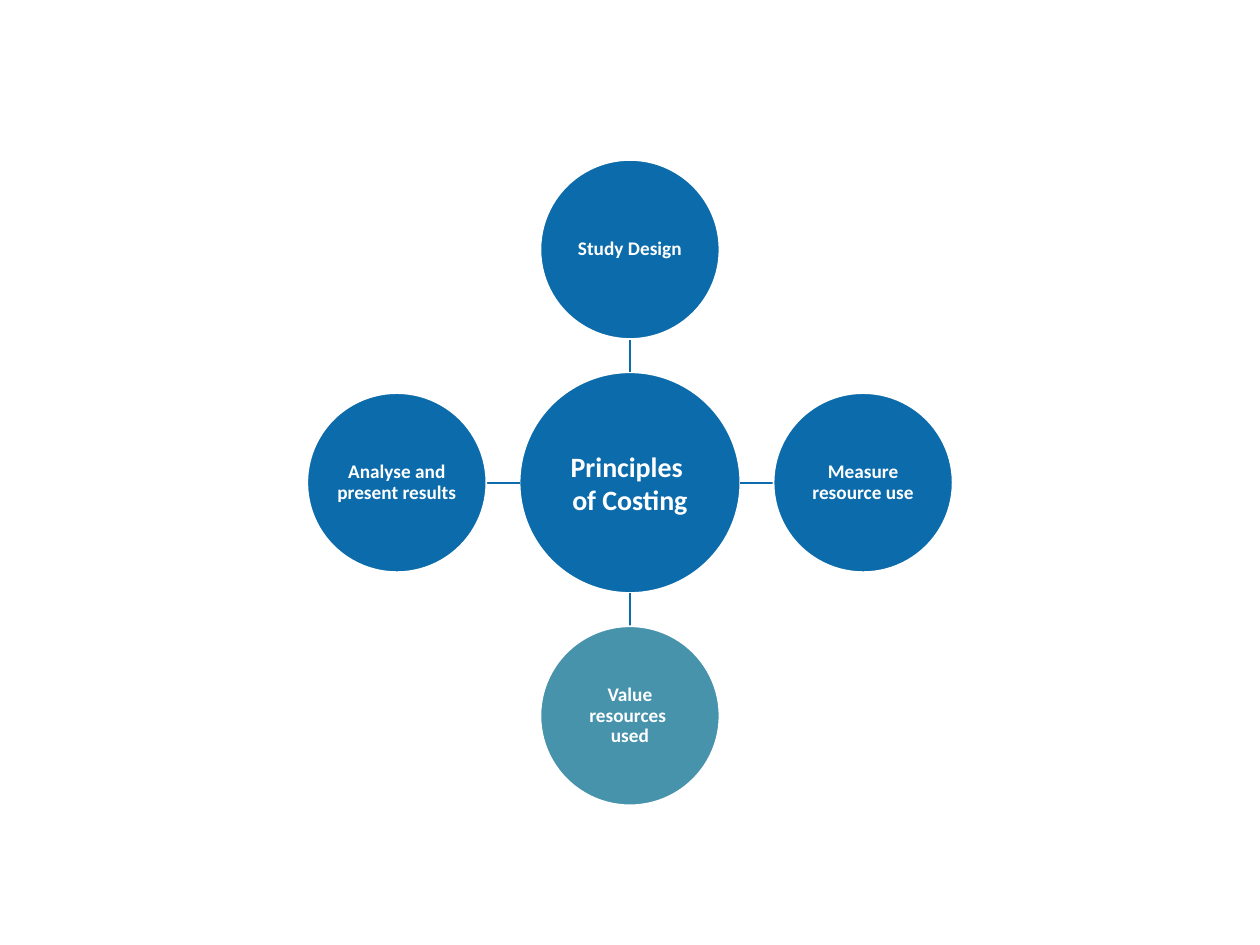
"""Build a hub-and-spoke slide on the principles of costing."""
from lxml import etree
from pptx import Presentation
from pptx.dml.color import RGBColor
from pptx.enum.shapes import MSO_CONNECTOR, MSO_SHAPE
from pptx.enum.text import MSO_ANCHOR, PP_ALIGN
from pptx.oxml.ns import qn
from pptx.util import Cm, Pt

OVAL = MSO_SHAPE.OVAL
STRAIGHT = MSO_CONNECTOR.STRAIGHT
MIDDLE = MSO_ANCHOR.MIDDLE
CENTER = PP_ALIGN.CENTER

THEME = {
    "blue": RGBColor(0x0C, 0x6B, 0xAB),
    "teal": RGBColor(0x46, 0x93, 0xAB),
    "white": RGBColor(0xFF, 0xFF, 0xFF),
    "font": "Calibri",
    "hub_size": Pt(16),
    "step_size": Pt(11),
    "line": Pt(1),
}
FRAME_FORMAT = {
    "word_wrap": True,
    "vertical_anchor": MIDDLE,
    "margin_left": Cm(0.05),
    "margin_right": Cm(0.05),
    "margin_top": Cm(0.03),
    "margin_bottom": Cm(0.03),
}

CENTER_X, CENTER_Y = 12.7, 9.73
HUB_DIAMETER, STEP_DIAMETER = 4.45, 3.61
ORBIT = 4.7
SPOKE_START = HUB_DIAMETER / 2
SPOKE_END = ORBIT - STEP_DIAMETER / 2

STEPS = [
    ("Study Design", 0, -1, "blue"),
    ("Measure resource use", 1, 0, "blue"),
    ("Value resources \vused", 0, 1, "teal"),
    ("Analyse and present results", -1, 0, "blue"),
]


def set_all(target, values):
    for name, value in values.items():
        setattr(target, name, value)


def add_circle(slide, text, x, y, diameter, color, size, spacing):
    circle = slide.shapes.add_shape(
        OVAL, Cm(x - diameter / 2), Cm(y - diameter / 2), Cm(diameter), Cm(diameter)
    )
    circle.shadow.inherit = False
    circle.fill.solid()
    circle.fill.fore_color.rgb = THEME[color]
    circle.line.color.rgb = THEME["white"]
    circle.line.width = THEME["line"]
    set_all(circle.text_frame, FRAME_FORMAT)
    label = circle.text_frame.paragraphs[0]
    label.text = text
    set_all(label, {"alignment": CENTER, "line_spacing": spacing})
    for run in label.runs:
        set_all(run.font, {"name": THEME["font"], "size": THEME[size], "bold": True})
        run.font.color.rgb = THEME["white"]


prs = Presentation()
prs.slide_width, prs.slide_height = Cm(25.4), Cm(19.05)
slide = prs.slides.add_slide(prs.slide_layouts[6])

add_circle(slide, "Principles \vof Costing", CENTER_X, CENTER_Y,
           HUB_DIAMETER, "blue", "hub_size", 1.0)

for step, dx, dy, color in STEPS:
    spoke = slide.shapes.add_connector(
        STRAIGHT,
        Cm(CENTER_X + dx * SPOKE_START), Cm(CENTER_Y + dy * SPOKE_START),
        Cm(CENTER_X + dx * SPOKE_END), Cm(CENTER_Y + dy * SPOKE_END),
    )
    spoke.line.color.rgb = THEME["blue"]
    spoke.line.width = THEME["line"]
    etree.SubElement(spoke._element.spPr, qn("a:effectLst"))
    add_circle(slide, step, CENTER_X + dx * ORBIT, CENTER_Y + dy * ORBIT,
               STEP_DIAMETER, color, "step_size", 0.9)

prs.save("out.pptx")
